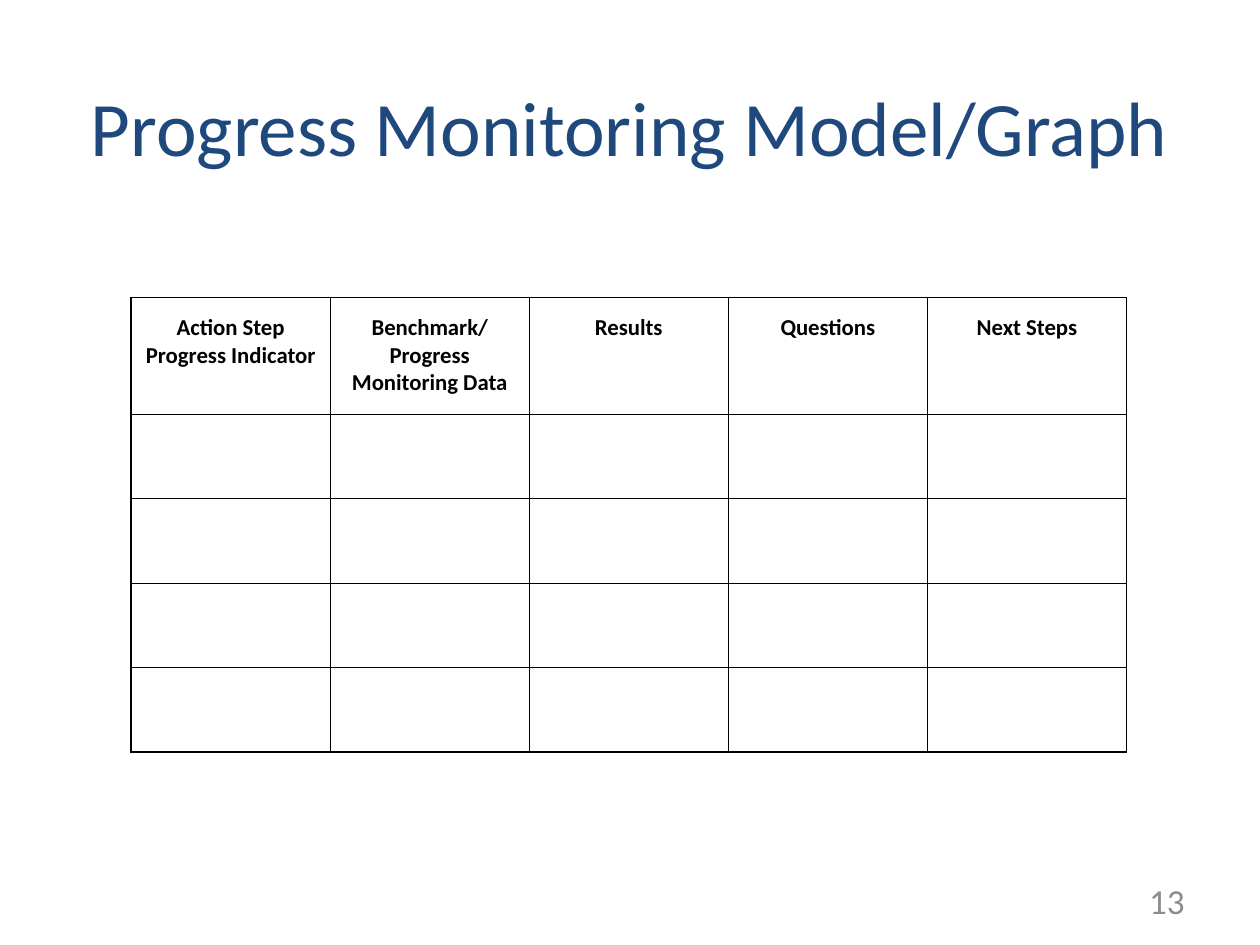
from lxml import etree
from pptx import Presentation
from pptx.dml.color import RGBColor
from pptx.enum import text
from pptx.oxml import ns
from pptx.util import Inches, Pt

TITLE = "Progress Monitoring Model/Graph"
HEADERS = [
    "Action Step Progress Indicator",
    "Benchmark/\nProgress Monitoring Data",
    "Results",
    "Questions",
    "Next Steps",
]
PAGE_NUMBER = "13"
EMPTY_ROWS = 4
TABLE_LEFT, TABLE_TOP = 1.04, 2.36
COLUMN_WIDTH, HEADER_HEIGHT, ROW_HEIGHT = 1.58, 0.93, 0.67
BLACK, WHITE, NAVY, GRAY = "000000", "FFFFFF", "1F497D", "8C8C8C"


def color(value):
    return RGBColor.from_string(value)


def write(frame, content, size, fill, align, bold=False):
    frame.text = content
    for paragraph in frame.paragraphs:
        paragraph.alignment = align
        for run in paragraph.runs:
            run.font.name = "Calibri"
            run.font.size = Pt(size)
            run.font.bold = bold
            run.font.color.rgb = color(fill)


def add_text(slide, box, content, size, fill, align, anchor):
    frame = slide.shapes.add_textbox(*map(Inches, box)).text_frame
    frame.word_wrap = True
    frame.vertical_anchor = anchor
    write(frame, content, size, fill, align)
    return frame


def add_borders(cell):
    properties = cell._tc.get_or_add_tcPr()
    for index, side in enumerate(("lnL", "lnR", "lnT", "lnB")):
        line = etree.Element(ns.qn(f"a:{side}"), w=str(Pt(0.75)))
        fill = etree.SubElement(line, ns.qn("a:solidFill"))
        etree.SubElement(fill, ns.qn("a:srgbClr"), val=BLACK)
        properties.insert(index, line)


def add_table(slide):
    heights = [HEADER_HEIGHT] + [ROW_HEIGHT] * EMPTY_ROWS
    size = (COLUMN_WIDTH * len(HEADERS), sum(heights))
    table = slide.shapes.add_table(
        len(heights), len(HEADERS), *map(Inches, (TABLE_LEFT, TABLE_TOP, *size))
    ).table
    for column in table.columns:
        column.width = Inches(COLUMN_WIDTH)
    for row, height in zip(table.rows, heights):
        row.height = Inches(height)
    for cell in table.iter_cells():
        cell.fill.solid()
        cell.fill.fore_color.rgb = color(WHITE)
        add_borders(cell)
    for cell, header in zip(table.rows[0].cells, HEADERS):
        cell.margin_left = cell.margin_right = Inches(0.1)
        cell.margin_top = cell.margin_bottom = Inches(0.13)
        write(cell.text_frame, header, 13, BLACK, text.PP_ALIGN.CENTER, bold=True)


def main():
    """Build the progress monitoring slide."""
    presentation = Presentation()
    presentation.slide_width, presentation.slide_height = Inches(10), Inches(7.5)
    slide = presentation.slides.add_slide(presentation.slide_layouts[6])

    title = add_text(slide, (0.5, 0.42, 9, 1.25), TITLE, 44, NAVY,
                     text.PP_ALIGN.CENTER, text.MSO_ANCHOR.TOP)
    title.margin_left = title.margin_right = Inches(0.1)
    title.margin_top = title.margin_bottom = Inches(0.1)
    title.paragraphs[0].line_spacing = 1.15
    title.paragraphs[0].space_after = Pt(16)

    add_table(slide)
    add_text(slide, (7.17, 6.95, 2.33, 0.4), PAGE_NUMBER, 20, GRAY,
             text.PP_ALIGN.RIGHT, text.MSO_ANCHOR.MIDDLE)
    presentation.save("out.pptx")


if __name__ == "__main__":
    main()
